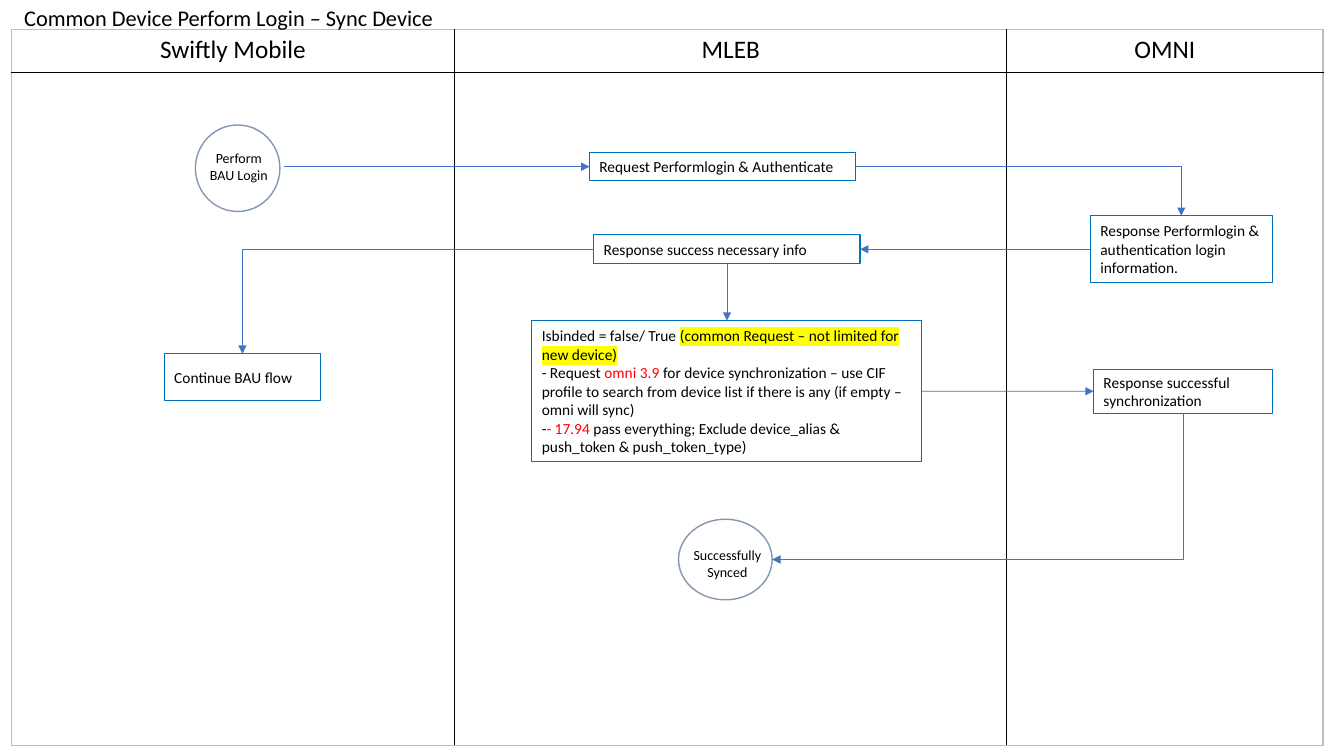
from dataclasses import dataclass

from lxml import etree
from pptx import Presentation
from pptx.dml.color import RGBColor
from pptx.enum.shapes import MSO_CONNECTOR, MSO_SHAPE
from pptx.enum.text import MSO_ANCHOR, PP_ALIGN
from pptx.oxml.ns import qn
from pptx.util import Cm, Pt

RECT, OVAL = MSO_SHAPE.RECTANGLE, MSO_SHAPE.OVAL
STRAIGHT, ELBOW = MSO_CONNECTOR.STRAIGHT, MSO_CONNECTOR.ELBOW
LEFT, CENTER = PP_ALIGN.LEFT, PP_ALIGN.CENTER
MIDDLE = MSO_ANCHOR.MIDDLE
TOP_SIDE, LEFT_SIDE, BOTTOM_SIDE, RIGHT_SIDE = range(4)


@dataclass(frozen=True)
class Theme:
    font: str = "Calibri"
    text: str = "000000"
    red: str = "FF0000"
    marker: str = "FFFF00"
    box: str = "0070C0"
    arrow: str = "4472C4"
    circle: str = "8497B0"
    grid: str = "000000"
    frame: str = "BFBFBF"
    title_size: int = 16
    lane_size: int = 18
    box_size: int = 11
    circle_size: int = 10


theme = Theme()


def write(tf, paragraphs, size, align=LEFT):
    """Fill a text frame; each paragraph is a list of (text, style) runs."""
    tf.word_wrap = True
    tf.vertical_anchor = MIDDLE
    for i, runs in enumerate(paragraphs):
        p = tf.paragraphs[0] if i == 0 else tf.add_paragraph()
        p.alignment = align
        for text, style in runs:
            r = p.add_run()
            r.text = text
            r.font.name = theme.font
            r.font.size = Pt(size)
            r.font.color.rgb = RGBColor.from_string(theme.red if style == "red" else theme.text)
            if style == "marked":
                highlight = etree.Element(qn("a:highlight"))
                etree.SubElement(highlight, qn("a:srgbClr"), val=theme.marker)
                r.font._element.find(qn("a:solidFill")).addnext(highlight)


def add_arrow(kind, start, site, x=0, y=0):
    """Draw an arrow from a side of the start shape to the point x, y."""
    c = s.shapes.add_connector(kind, 0, 0, x, y)
    c.begin_connect(start, site)
    c.line.color.rgb = RGBColor.from_string(theme.arrow)
    c.line.width = Pt(0.5)
    spPr = c._element.spPr
    etree.SubElement(spPr.find(qn("a:ln")), qn("a:tailEnd"), type="triangle")
    etree.SubElement(spPr, qn("a:effectLst"))
    if kind == ELBOW:
        spPr.find(qn("a:prstGeom")).set("prst", "bentConnector2")
    return c


prs = Presentation()
prs.slide_width, prs.slide_height = Cm(33.87), Cm(19.05)
s = prs.slides.add_slide(prs.slide_layouts[6])

# Swimlanes
lanes = [("Swiftly Mobile", 11.18), ("MLEB", 13.91), ("OMNI", 7.97)]
row_heights = [1.07, 16.97]
table = s.shapes.add_table(2, 3, Cm(0.28), Cm(0.75), Cm(33.06), Cm(18.04)).table
table.first_row = table.horz_banding = False
for row, height in zip(table.rows, row_heights):
    row.height = Cm(height)
for col, (lane, width) in enumerate(lanes):
    table.columns[col].width = Cm(width)
    write(table.cell(0, col).text_frame, [[(lane, "plain")]], theme.lane_size, CENTER)
    for row in range(2):
        cell = table.cell(row, col)
        cell.fill.background()
        tcPr = cell._tc.get_or_add_tcPr()
        outer = [("lnL", col == 0), ("lnR", col == 2), ("lnT", row == 0), ("lnB", row == 1)]
        for i, (side, is_outer) in enumerate(outer):
            ln = etree.Element(qn("a:" + side), w=str(Pt(1)))
            fill = etree.SubElement(ln, qn("a:solidFill"))
            etree.SubElement(fill, qn("a:srgbClr"), val=theme.frame if is_outer else theme.grid)
            tcPr.insert(i, ln)

# Title
sp = s.shapes.add_textbox(Cm(0.36), Cm(-0.03), Cm(15.14), Cm(0.94))
write(sp.text_frame, [[("Common Device Perform Login – Sync Device", "plain")]], theme.title_size)

# Step boxes: centre x, centre y, width, height, text
steps = {
    "request": (18.21, 4.2, 6.71, 0.71, [[("Request Performlogin & Authenticate", "plain")]]),
    "login": (29.77, 6.28, 4.58, 1.68,
              [[("Response Performlogin & authentication login information.", "plain")]]),
    "success": (18.32, 6.28, 6.71, 0.73, [[("Response success necessary info", "plain")]]),
    "binding": (18.32, 9.86, 9.83, 3.56, [
        [("Isbinded = false/ True ", "plain"),
         ("(common Request – not limited for new device)", "marked")],
        [("- Request ", "plain"), ("omni 3.9 ", "red"),
         ("for device synchronization – use CIF profile to search from device list "
          "if there is any (if empty – omni will sync)", "plain")],
        [("-", "plain"), ("- 17.94 ", "red"),
         ("pass everything; Exclude device_alias & push_token & push_token_type)", "plain")]]),
    "sync": (29.82, 9.86, 4.52, 1.12, [[("Response successful synchronization", "plain")]]),
    "continue": (6.11, 9.5, 3.94, 1.17, [[("Continue BAU flow", "plain")]]),
}
nodes = {}
for name, (cx, cy, w, h, paragraphs) in steps.items():
    sp = s.shapes.add_shape(RECT, Cm(cx - w / 2), Cm(cy - h / 2), Cm(w), Cm(h))
    sp.shadow.inherit = False
    sp.fill.background()
    sp.line.color.rgb = RGBColor.from_string(theme.box)
    sp.line.width = Pt(0.75)
    write(sp.text_frame, paragraphs, theme.box_size)
    nodes[name] = sp

# Start and end circles, each grouped with its label
terminals = [
    ("start", "Perform BAU Login", (5.99, 4.24, 2.13, 2.18), (6.02, 4.2, 2.29, 1.19)),
    ("end", "Successfully Synced", (18.28, 14.1, 2.36, 2.03), (18.33, 14.2, 2.51, 1.12)),
]
for name, text, (cx, cy, w, h), (tx, ty, tw, th) in terminals:
    group = s.shapes.add_group_shape()
    circle = group.shapes.add_shape(OVAL, Cm(cx - w / 2), Cm(cy - h / 2), Cm(w), Cm(h))
    circle.shadow.inherit = False
    circle.fill.background()
    circle.line.color.rgb = RGBColor.from_string(theme.circle)
    circle.line.width = Pt(1)
    label = group.shapes.add_textbox(Cm(tx - tw / 2), Cm(ty - th / 2), Cm(tw), Cm(th))
    write(label.text_frame, [[(text, "plain")]], theme.circle_size, CENTER)
    nodes[name] = label if name == "start" else circle

# Arrows between steps
links = [
    (STRAIGHT, "start", RIGHT_SIDE, "request", LEFT_SIDE),
    (ELBOW, "request", RIGHT_SIDE, "login", TOP_SIDE),
    (STRAIGHT, "login", LEFT_SIDE, "success", RIGHT_SIDE),
    (ELBOW, "success", LEFT_SIDE, "continue", TOP_SIDE),
    (STRAIGHT, "success", BOTTOM_SIDE, "binding", TOP_SIDE),
    (STRAIGHT, "binding", RIGHT_SIDE, "sync", LEFT_SIDE),
]
for kind, start, start_site, end, end_site in links:
    c = add_arrow(kind, nodes[start], start_site)
    c.end_connect(nodes[end], end_site)

# The last arrow goes down first, so its elbow is turned by 90 degrees
sync, end = nodes["sync"], nodes["end"]
x1, y1 = sync.left + sync.width // 2, sync.top + sync.height
x2, y2 = end.left + end.width, end.top + end.height // 2
c = add_arrow(ELBOW, sync, BOTTOM_SIDE, x2, y2)
c.width, c.height = y2 - y1, x1 - x2
c.left = (x1 + x2 - c.width) // 2
c.top = (y1 + y2 - c.height) // 2
xfrm = c._element.spPr.find(qn("a:xfrm"))
for flip in ("flipH", "flipV"):
    xfrm.attrib.pop(flip, None)
xfrm.set("rot", str(90 * 60000))

prs.save("out.pptx")
